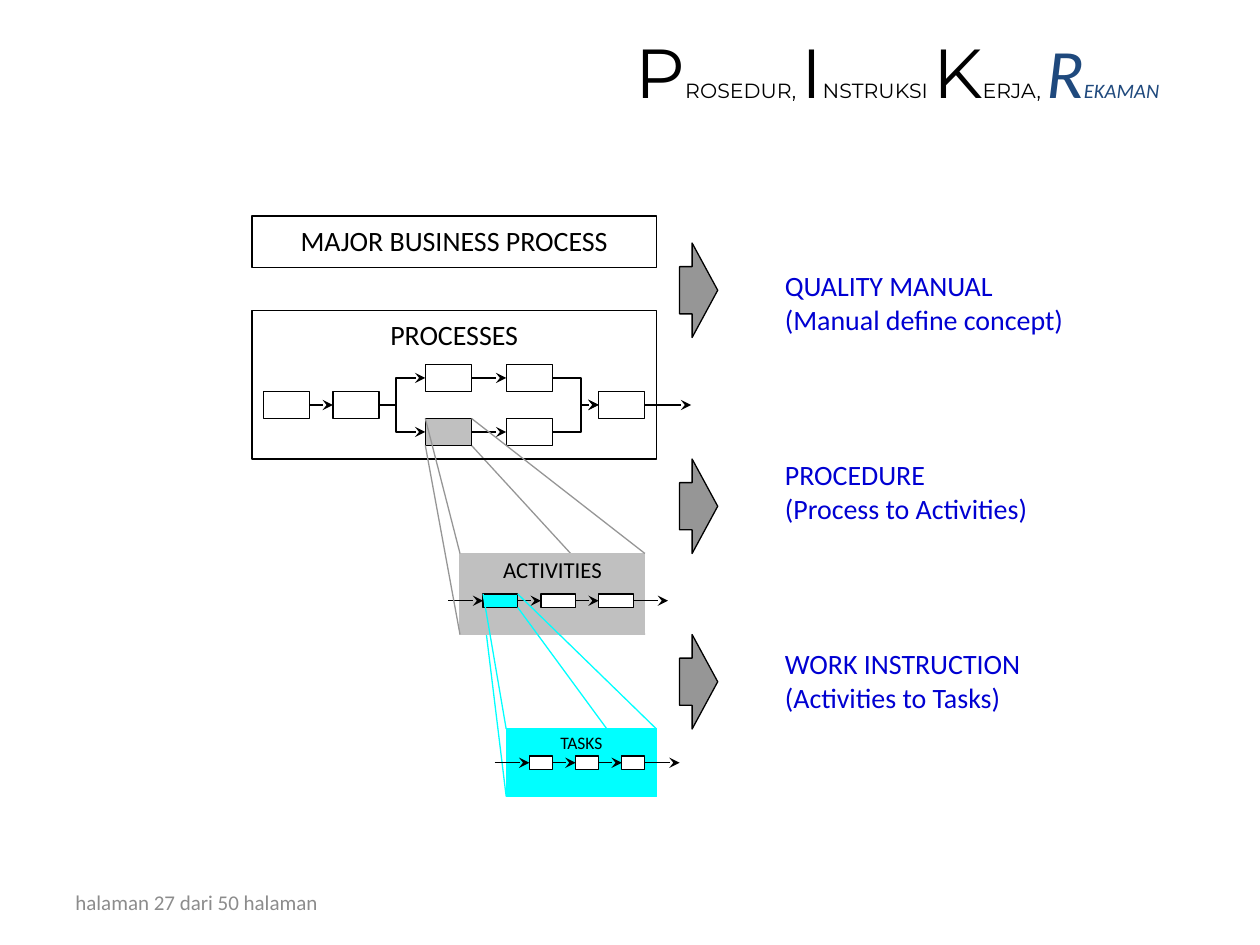
import pptx
import pptx.util
from pptx.dml.color import RGBColor
from pptx.enum.shapes import MSO_CONNECTOR, MSO_SHAPE
from pptx.enum.text import MSO_ANCHOR, PP_ALIGN
from pptx.oxml.ns import qn
from lxml import etree

BLACK = RGBColor(0, 0, 0)
WHITE = RGBColor(255, 255, 255)
GREY = RGBColor(0xC0, 0xC0, 0xC0)
DARK = RGBColor(0x96, 0x96, 0x96)
CYAN = RGBColor(0, 255, 255)
BLUE = RGBColor(0, 0, 0xD2)
NAVY = RGBColor(0x1F, 0x49, 0x7D)
PALE = RGBColor(0x8C, 0x8C, 0x8C)

WIDE, HIGH = 10, 7.5
LEFT = 2               # where the diagram's columns start
COL = 3.21 / 35
ROW = HIGH / 70

# Panels and key steps as column, row, columns wide, rows high
MAJOR = (0, 16, 35, 3.8)
PROCESS = (0, 23, 35, 11)
ACTIVITY = (18, 41, 16, 6)
TASK = (22, 54, 13, 5)
STEP = (15, 31, 4, 2)
ACT = (20, 44, 3, 1)


def spot(col, row):
    return pptx.util.Inches(LEFT + col * COL), pptx.util.Inches(row * ROW)


def style(font, size, color, name="Calibri", italic=None):
    font.size, font.name, font.italic = pptx.util.Pt(size), name, italic
    font.color.rgb = color


def shape(slide, cell, fill=None, edge=BLACK, kind=MSO_SHAPE.RECTANGLE):
    col, row, wide, high = cell
    item = slide.shapes.add_shape(
        kind, *spot(col, row),
        pptx.util.Inches(wide * COL), pptx.util.Inches(high * ROW))
    item.shadow.inherit = False
    if fill is None:
        item.fill.background()
    else:
        item.fill.solid()
        item.fill.fore_color.rgb = fill
    item.line.color.rgb = edge
    item.line.width = pptx.util.Pt(0.75)
    return item


def pad(frame, side, top, low):
    frame.margin_left = frame.margin_right = pptx.util.Inches(side)
    frame.margin_top = pptx.util.Inches(top)
    frame.margin_bottom = pptx.util.Inches(low)


def panel(slide, cell, text, size, fill=None, edge=BLACK, top=0.06):
    frame = shape(slide, cell, fill, edge).text_frame
    pad(frame, 0.13, top, 0.06)
    frame.vertical_anchor = MSO_ANCHOR.TOP
    frame.text = text
    para = frame.paragraphs[0]
    para.alignment = PP_ALIGN.CENTER
    style(para.runs[0].font, size, BLACK)


def link(slide, start, end, color=BLACK, arrow=False, bend=None):
    """Join two grid points; bend is the share of the way where an elbow turns."""
    kind = MSO_CONNECTOR.STRAIGHT if bend is None else MSO_CONNECTOR.ELBOW
    item = slide.shapes.add_connector(kind, *spot(*start), *spot(*end))
    item.line.color.rgb = color
    item.line.width = pptx.util.Pt(0.75)
    props = item._element.spPr
    if arrow:
        etree.SubElement(item.line._get_or_add_ln(), qn("a:tailEnd"), type="stealth")
    etree.SubElement(props, qn("a:effectLst"))
    if bend is not None:
        turns = props.find(qn("a:prstGeom")).find(qn("a:avLst"))
        etree.SubElement(turns, qn("a:gd"), name="adj1",
                         fmla=f"val {round(bend * 100000)}")
    return item


def port(cell, side):
    """Middle of the left (0) or right (1) side of a cell."""
    col, row, wide, high = cell
    return col + side * wide, row + high / 2


def join(slide, first, last, cells):
    """Arrow from the right side of one step to the left side of the next."""
    item = link(slide, port(cells[0], 1), port(cells[1], 0), arrow=True)
    item.begin_connect(first, 3)
    item.end_connect(last, 1)


def chain(slide, cells, fills, into=0, out=0):
    """Row of steps with arrows between, and arrows in and out if given a length."""
    steps = [shape(slide, cell, fill) for cell, fill in zip(cells, fills)]
    for n in range(len(steps) - 1):
        join(slide, steps[n], steps[n + 1], cells[n:n + 2])
    if into:
        col, row = port(cells[0], 0)
        link(slide, (col - into, row), (col, row), arrow=True).end_connect(steps[0], 1)
    if out:
        col, row = port(cells[-1], 1)
        link(slide, (col, row), (col + out, row), arrow=True).begin_connect(steps[-1], 3)


def zoom(slide, part, whole, color, corners):
    """Lines from corners of a step to the same corners of its enlarged panel."""
    for right, low in corners:
        start, end = ((col + right * wide, row + low * high)
                      for col, row, wide, high in (part, whole))
        link(slide, start, end, color)


def flow(slide):
    first, second, final = ((col, 29, 4, 2) for col in (1, 7, 30))
    chain(slide, [first, second], [None, None])
    chain(slide, [final], [None], out=4)
    for row, fill in ((27, None), (31, GREY)):
        pair = [(15, row, 4, 2), (22, row, 4, 2)]
        chain(slide, pair, [fill, None])
        link(slide, port(second, 1), port(pair[0], 0), arrow=True, bend=0.37)
        link(slide, port(pair[1], 1), port(final, 0), arrow=True, bend=0.62)


def block(slide, left, top, wide, high):
    """Text box placed by shares of the slide's size."""
    box = slide.shapes.add_textbox(*(pptx.util.Inches(n) for n in (
        left * WIDE, top * HIGH, wide * WIDE, high * HIGH)))
    box.text_frame.word_wrap = True
    return box.text_frame


def title(slide):
    frame = block(slide, 0.08, 0.04, 0.85, 0.07)
    frame.vertical_anchor = MSO_ANCHOR.MIDDLE
    para = frame.paragraphs[0]
    para.alignment = PP_ALIGN.RIGHT
    for word in ("PROSEDUR, ", "INSTRUKSI ", "KERJA, ", "REKAMAN"):
        last = word == "REKAMAN"
        look = (NAVY, "Calibri", True) if last else (BLACK, "Montserrat")
        for text, size in ((word[0], 39.6), (word[1:], 11.7)):
            run = para.add_run()
            run.text = text
            style(run.font, size, *look)


def notes(slide):
    frame = block(slide, 0.61, 0.25, 0.28, 0.57)
    pad(frame, 0.13, 0.26, 0.06)
    pairs = (("QUALITY MANUAL", "(Manual define concept)"),
             ("PROCEDURE", "(Process to Activities)"),
             ("WORK INSTRUCTION", "(Activities to Tasks)"))
    frame.text = "\n".join(line for pair in pairs for line in pair)
    for n, para in enumerate(frame.paragraphs):
        style(para.runs[0].font, 16, BLUE)
        if n and n % 2 == 0:
            para.space_before = pptx.util.Pt(69.5)


def footer(slide):
    frame = block(slide, 0.05, 0.93, 0.23, 0.05)
    frame.vertical_anchor = MSO_ANCHOR.MIDDLE
    frame.text = "halaman 27 dari 50 halaman"
    style(frame.paragraphs[0].runs[0].font, 12, PALE)


def main():
    deck = pptx.Presentation()
    deck.slide_width = pptx.util.Inches(WIDE)
    deck.slide_height = pptx.util.Inches(HIGH)
    slide = deck.slides.add_slide(deck.slide_layouts[6])

    title(slide)
    panel(slide, MAJOR, "MAJOR BUSINESS PROCESS", 16)
    zoom(slide, STEP, ACTIVITY, DARK, [(1, 1)])
    zoom(slide, ACT, TASK, CYAN, [(0, 1)])
    panel(slide, ACTIVITY, "ACTIVITIES", 13, GREY, GREY, 0.02)
    chain(slide, [ACT, (25, 44, 3, 1), (30, 44, 3, 1)], [CYAN, WHITE, WHITE], 3, 3)
    zoom(slide, ACT, TASK, CYAN, [(1, 1)])
    panel(slide, PROCESS, "PROCESSES", 16)
    flow(slide)
    panel(slide, TASK, "TASKS", 10, CYAN, CYAN, 0.02)
    chain(slide, [(col, 56, 2, 1) for col in (24, 28, 32)], [WHITE] * 3, 3, 3)
    zoom(slide, STEP, ACTIVITY, DARK, [(0, 0), (1, 0), (0, 1)])
    zoom(slide, ACT, TASK, CYAN, [(1, 0), (0, 0)])
    for row in (18, 34, 47):
        arrow = shape(slide, (37, row, 3.3, 7), DARK, kind=MSO_SHAPE.RIGHT_ARROW)
        arrow.adjustments[0], arrow.adjustments[1] = 0.5, 0.67
    notes(slide)
    footer(slide)
    deck.save("out.pptx")


if __name__ == "__main__":
    main()
